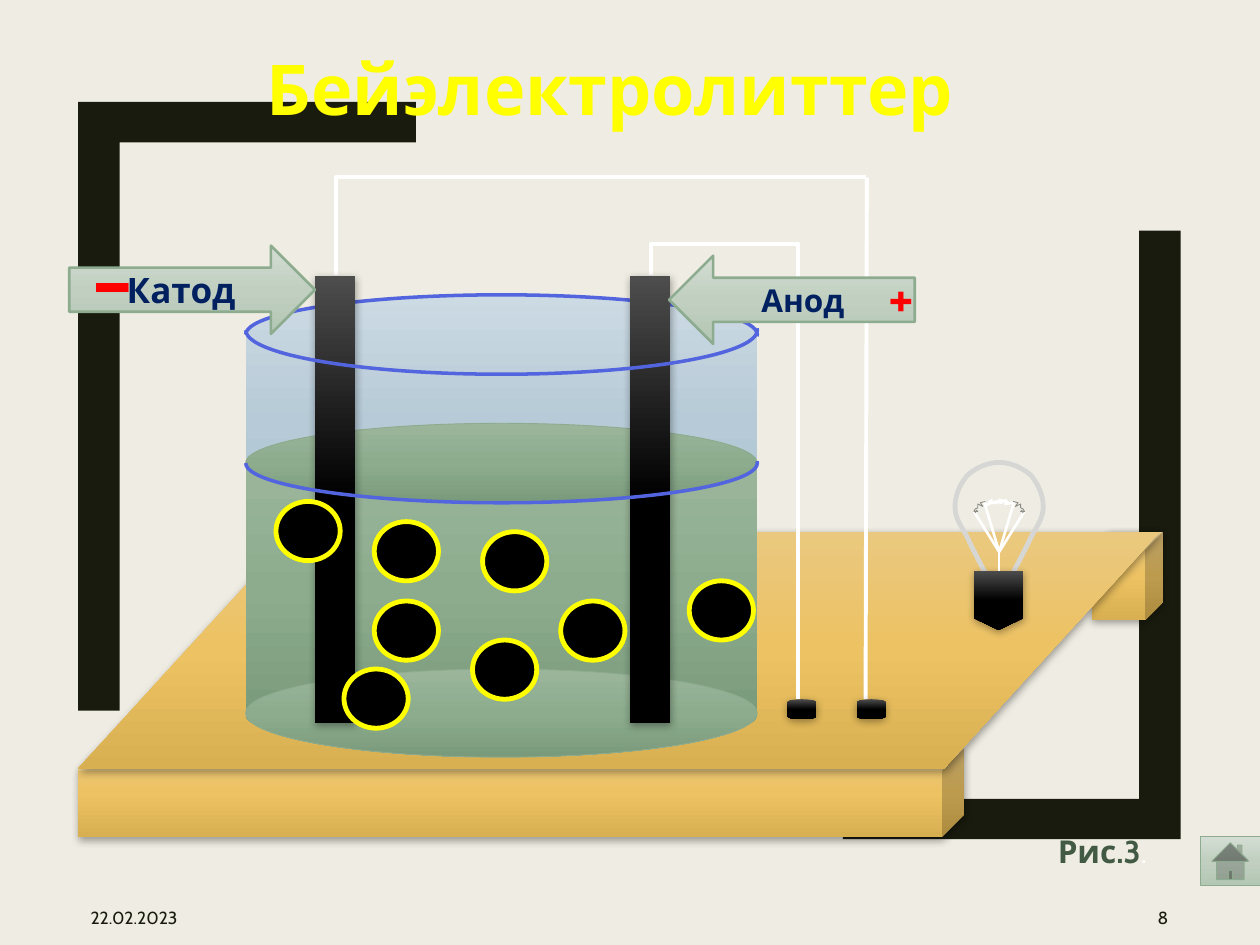
from copy import deepcopy
from lxml import etree
from pptx import Presentation
from pptx.dml.color import RGBColor
from pptx.enum.shapes import MSO_CONNECTOR, MSO_SHAPE
from pptx.enum.text import MSO_ANCHOR, MSO_AUTO_SIZE, PP_ALIGN
from pptx.oxml.ns import qn
from pptx.util import Inches, Pt

CUBE, BOX, OVAL, ARC = MSO_SHAPE.CUBE, MSO_SHAPE.RECTANGLE, MSO_SHAPE.OVAL, MSO_SHAPE.ARC
DISK, BOARD = MSO_SHAPE.FLOWCHART_MAGNETIC_DISK, MSO_SHAPE.FLOWCHART_DATA
SOCKET, DOT = MSO_SHAPE.FLOWCHART_OFFPAGE_CONNECTOR, MSO_SHAPE.FLOWCHART_CONNECTOR
LEFT_ARROW, RIGHT_ARROW = MSO_SHAPE.LEFT_ARROW, MSO_SHAPE.RIGHT_ARROW
HOME = MSO_SHAPE.ACTION_BUTTON_HOME
STRAIGHT, ELBOW = MSO_CONNECTOR.STRAIGHT, MSO_CONNECTOR.ELBOW
MIDDLE, TOP, NO_FIT = MSO_ANCHOR.MIDDLE, MSO_ANCHOR.TOP, MSO_AUTO_SIZE.NONE
START, CENTER, END = PP_ALIGN.LEFT, PP_ALIGN.CENTER, PP_ALIGN.RIGHT

FONT = "Cabin"
WOOD = ("EAC87E", "ECC263", "D9B051")
COAL = ("4D4D4D", "000000", "000000")
GLASS = ("CCDAE3", "B6CAD7", "A7C1D2")
FLUID = ("9BB59B", "8CAC8D", "7A9B7B")
PALE = ("D3DDD3", "C0CFC0", "B4C7B5")
EDGE, RIM, INK, WHITE = "8DAB8E", "5364DF", "191B0E", "FFFFFF"
YELLOW, RED, NAVY = "FFFF00", "FF0000", "002060"


def color(code):
    """Turn a hex string into a colour."""
    return RGBColor.from_string(code)


def paint(shape, fill=None, line=None, width=0.5, shadow=False):
    """Set fill (hex, or three gradient stops), line and shadow."""
    props = shape._element.spPr
    if fill is None:
        shape.fill.background()
    elif isinstance(fill, str):
        shape.fill.solid()
        shape.fill.fore_color.rgb = color(fill)
    else:
        shape.fill.gradient()
        shape.fill.gradient_angle = 270
        stops = props.find(".//" + qn("a:gsLst"))
        stops.insert(1, deepcopy(stops[0]))
        for stop, code, spot in zip(shape.fill.gradient_stops, fill, (0, 0.5, 1)):
            stop.color.rgb = color(code)
            stop.position = spot
    if line:
        shape.line.color.rgb = color(line)
        shape.line.width = Pt(width)
    else:
        shape.line.fill.background()
    shape.shadow.inherit = False
    if shadow:
        cast = etree.SubElement(props.find(qn("a:effectLst")), qn("a:outerShdw"),
                                blurRad=str(Pt(4.5)), dist=str(Pt(1.5)), dir="5400000",
                                algn="ctr", rotWithShape="0")
        tone = etree.SubElement(cast, qn("a:srgbClr"), val="000000")
        etree.SubElement(tone, qn("a:alpha"), val="35000")


def form(slide, kind, box, *look, **more):
    """Add a painted preset shape."""
    shape = slide.shapes.add_shape(kind, *map(Inches, box))
    paint(shape, *look, **more)
    return shape


def arc(slide, box, flip=False):
    """Add half of a rim, the lower half unless flipped."""
    shape = form(slide, ARC, box, None, RIM, 2)
    shape.adjustments[0], shape.adjustments[1] = 107.75, 0
    shape.rotation = 180
    if flip:
        shape._element.spPr.find(qn("a:xfrm")).set("flipV", "1")


def outline(slide, points, *look, close=False):
    """Add a freeform through the points."""
    spots = [(Inches(x), Inches(y)) for x, y in points]
    pen = slide.shapes.build_freeform(*spots[0])
    pen.add_line_segments(spots[1:], close=close)
    paint(pen.convert_to_shape(), *look)


def wire(slide, start, end, width=2.25, kind=STRAIGHT):
    """Add a white connector without shadow."""
    link = slide.shapes.add_connector(kind, *map(Inches, start + end))
    link.line.color.rgb = color(WHITE)
    link.line.width = Pt(width)
    etree.SubElement(link._element.spPr, qn("a:effectLst"))
    return link._element.spPr


def bend(slide, start, end, turn, preset, bias=None):
    """Add an elbow connector turned by the given degrees."""
    props = wire(slide, start, end, kind=ELBOW)
    props.find(qn("a:xfrm")).set("rot", str(turn * 60000))
    shape = props.find(qn("a:prstGeom"))
    shape.set("prst", preset)
    if bias is not None:
        guide = shape.find(qn("a:avLst"))
        etree.SubElement(guide, qn("a:gd"), name="adj1", fmla=f"val {bias}")


def write(shape, text, size, code, bold=False, align=CENTER, anchor=MIDDLE):
    """Put one formatted paragraph into a shape."""
    frame = shape.text_frame
    frame.word_wrap, frame.auto_size = True, NO_FIT
    frame.vertical_anchor = anchor
    para = frame.paragraphs[0]
    para.text, para.alignment = text, align
    font = para.font
    font.name, font.size, font.bold = FONT, Pt(size), bold
    font.color.rgb = color(code)
    return para


def label(slide, box, *args, **more):
    """Add a text box."""
    return write(slide.shapes.add_textbox(*map(Inches, box)), *args, **more)


def frame(slide, box):
    """Draw two facing corner brackets."""
    x, y, w, h = box
    half = [(0.33, 4.83), (0, 4.83), (0, 0), (2.68, 0), (2.68, 0.32), (0.33, 0.32)]
    outline(slide, [(x + a, y + b) for a, b in half], INK, close=True)
    outline(slide, [(x + w - a, y + h - b) for a, b in half], INK, close=True)


def table(slide, box):
    """Draw the wooden board with its wires and terminals."""
    x, y, w, h = box
    form(slide, CUBE, (x + 8.05, y, 0.56, 0.7), WOOD, shadow=True)
    form(slide, CUBE, (x, y + 1.72, 7.03, 0.7), WOOD, shadow=True)
    bend(slide, (5.16, 3.9), (4.38, -0.31), 90, "bentConnector2")
    form(slide, BOARD, (x, y, w, h), WOOD, shadow=True)


def leads(slide, box):
    """Draw the wires that go down to the two terminals."""
    x, y, w, h = box
    wire(slide, (x + 0.63, 1.41), (x + 0.62, y))
    form(slide, DISK, (x, y, w, h), COAL, shadow=True)
    bend(slide, (7.43, 3.28), (4.07, 4.45), 270, "bentConnector3", -7400)
    form(slide, DISK, (x + 0.55, y, w, h), COAL, shadow=True)


def beaker(slide, box):
    """Draw the vessel, its fluid and the electrodes."""
    x, y, w, h = box
    form(slide, DISK, (x, y, w, 2.03), GLASS)
    leads(slide, (6.25, 5.55, 0.23, 0.16))
    form(slide, DISK, (x, y + 2.04, w, 1.56), FLUID)
    form(slide, BOX, (x, y + 1.33, w, 2.03), FLUID)
    form(slide, OVAL, (x, y + 1.02, w, 0.63), FLUID, EDGE)
    form(slide, OVAL, (x, y + h - 0.7, w, 0.7), FLUID, EDGE)
    arc(slide, (x, y, w, 0.63), flip=True)
    for left in (x + 3.05, x + 0.55):
        form(slide, BOX, (left, y - 0.15, 0.32, 3.55), COAL, shadow=True)
    arc(slide, (x, y + 1.02, w, 0.63))


def poles(slide, box):
    """Name the anode and the cathode."""
    x, y, w, h = box
    anode = form(slide, LEFT_ARROW, (x + w - 1.95, y + 0.08, 1.95, 0.7), PALE, EDGE, 1.5)
    write(anode, "Анод", 18, NAVY, True)
    cathode = form(slide, RIGHT_ARROW, (x, y, 1.95, 0.7), PALE, EDGE, 1.5)
    write(cathode, "Катод", 20, NAVY, True)
    label(slide, (x + 0.07, y + 0.08, 0.31, 0.31), "-", 60, RED)
    label(slide, (x + w - 0.31, y + 0.24, 0.31, 0.31), "+", 32, RED, True)


def curve(start, parts, steps=8):
    """Sample a chain of cubic curves."""
    points = [start]
    for b, c, d in parts:
        a = points[-1]
        for t in (n / steps for n in range(1, steps + 1)):
            s = 1 - t
            points.append(tuple(s**3 * i + 3 * s * s * t * j + 3 * s * t * t * k + t**3 * m
                                for i, j, k, m in zip(a, b, c, d)))
    return points


def bulb(slide, box):
    """Draw the lamp: glass, socket and filament."""
    x, y, w, h = box
    mid, hub = x + w / 2, y + 0.71
    side = curve((mid, y), [((mid + 0.09, y), (mid + 0.18, y + 0.04), (mid + 0.25, y + 0.1)),
                            ((mid + 0.31, y + 0.17), (mid + 0.35, y + 0.26), (mid + 0.35, y + 0.35)),
                            ((mid + 0.35, y + 0.45), (mid + 0.3, y + 0.5), (mid + 0.25, y + 0.6)),
                            ((mid + 0.2, y + 0.71), (mid + 0.1, y + 0.89), (mid + 0.06, y + 0.98))])
    glass = side + [(2 * mid - a, b) for a, b in reversed(side)]
    outline(slide, glass, None, "D6D7D4", 2.75, close=True)
    form(slide, SOCKET, (x + 0.15, y + 0.86, 0.39, 0.47), COAL, shadow=True)
    for dx, dy in ((-0.12, 0.31), (0.12, 0.31), (-0.2, 0.39), (0.2, 0.39), (0, 0.86)):
        wire(slide, (mid, hub), (mid + dx, y + dy), 1.5)
    coil = [(-0.11, 0.34), (-0.08, 0.33), (-0.06, 0.3), (-0.08, 0.32), (-0.02, 0.32), (-0.03, 0.31),
            (0.02, 0.32), (0, 0.3), (0.06, 0.31), (0.05, 0.3), (0.05, 0.33), (0.11, 0.32), (0.11, 0.33)]
    outline(slide, [(mid + a, y + b) for a, b in coil], None, WHITE, 1.5)
    tail = [(0.19, 0.4), (0.18, 0.38), (0.17, 0.39), (0.2, 0.39), (0.19, 0.37), (0.17, 0.36),
            (0.17, 0.33), (0.13, 0.35), (0.15, 0.32), (0.11, 0.31)]
    for sign in (1, -1):
        outline(slide, [(mid + sign * a, y + b) for a, b in tail], None, "8C8D86", 0.5)


def ions(slide, box):
    """Scatter the dark particles in the fluid."""
    x, y, w, h = box
    spots = ((2.26, 0.79), (0.78, 0.16), (1.64, 0.24), (3.28, 0.63),
             (0.78, 0.79), (1.56, 1.1), (0.54, 1.33), (0, 0))
    for dx, dy in spots:
        form(slide, DOT, (x + dx, y + dy, w, h), "000000", YELLOW, 2.75)


def notes(slide, box):
    """Write the date, page number and caption, and add the home button."""
    x, y, w, h = box
    label(slide, (x, y, 1.32, h), "22.02.2023", 10, INK, align=START)
    label(slide, (x + w - 1.31, y, 1.31, h), "8", 10, INK, align=END)
    para = label(slide, (8.28, 6.56, 0.94, 0.39), "Рис.3", 18, "425A43", True)
    dot = para.add_run()
    dot.text, dot.font.bold = ".", False
    dot.font.color.rgb = color(WHITE)
    form(slide, HOME, (9.53, 6.64, 0.47, 0.39), PALE, EDGE)


def head(slide, box):
    """Place the title in front of everything."""
    title = slide.shapes.title
    title.left, title.top, title.width, title.height = map(Inches, box)
    write(title, "Бейэлектролиттер", 40, YELLOW, True, anchor=TOP)
    slide.shapes._spTree.append(title._element)


def main():
    """Build the slide."""
    deck = Presentation()
    deck.slide_width, deck.slide_height = Inches(10), Inches(7.5)
    slide = deck.slides.add_slide(deck.slide_layouts[5])
    slide.background.fill.solid()
    slide.background.fill.fore_color.rgb = color("EFEDE3")
    frame(slide, (0.62, 0.81, 8.75, 5.85))
    table(slide, (0.62, 4.22, 8.59, 1.88))
    beaker(slide, (1.95, 2.34, 4.06, 3.67))
    poles(slide, (0.55, 1.95, 6.71, 0.78))
    arc(slide, (1.95, 2.27, 4.06, 0.7))
    bulb(slide, (7.58, 3.67, 0.7, 1.18))
    ions(slide, (2.19, 3.98, 0.51, 0.47))
    notes(slide, (0.62, 7.06, 8.75, 0.44))
    head(slide, (1.95, 0.31, 5.78, 0.77))
    deck.save("out.pptx")


if __name__ == "__main__":
    main()
